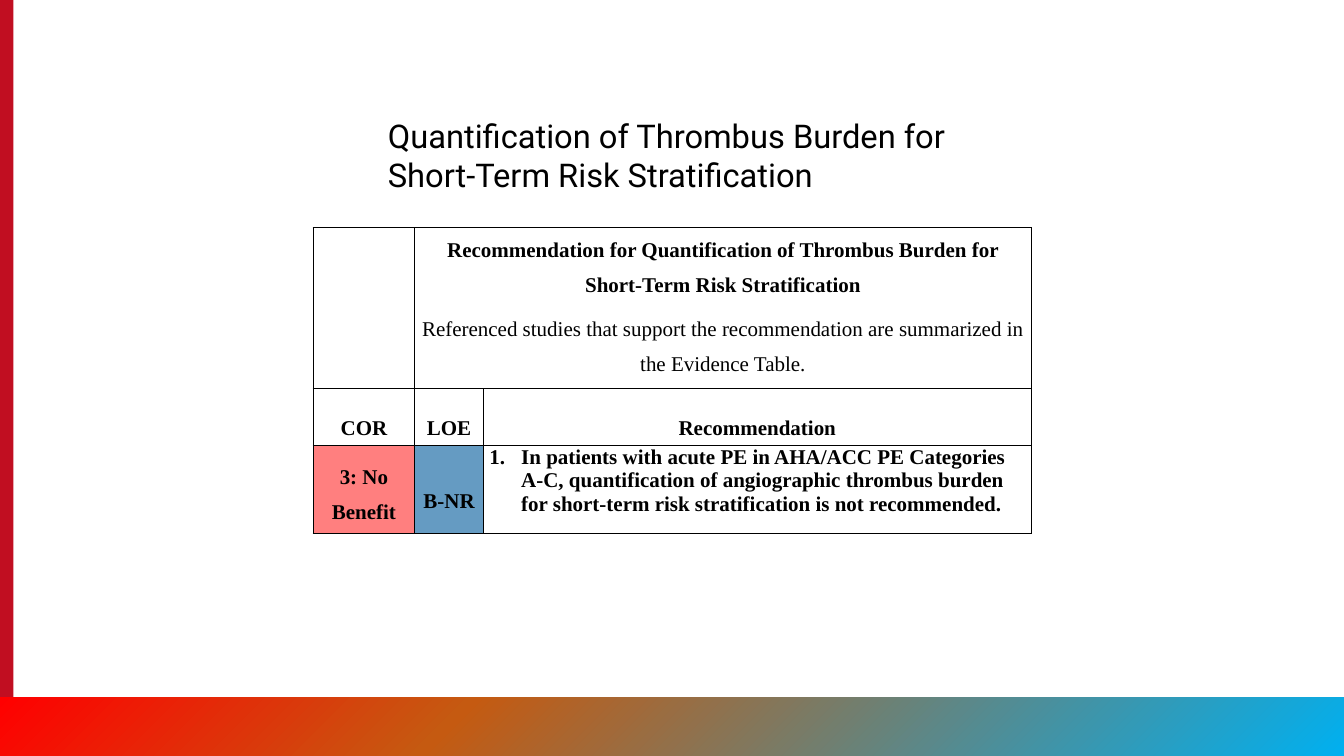
from copy import deepcopy

from lxml.etree import SubElement
from pptx import Presentation
from pptx.dml.color import RGBColor
from pptx.enum.shapes import MSO_SHAPE as Shape
from pptx.enum.text import MSO_ANCHOR as Anchor, PP_ALIGN as Align
from pptx.oxml import parse_xml
from pptx.oxml.ns import nsdecls, qn
from pptx.util import Cm, Pt

BLACK = RGBColor(0x00, 0x00, 0x00)
CRIMSON = RGBColor(0xC1, 0x0E, 0x21)
RED = RGBColor(0xFF, 0x00, 0x00)
ORANGE = RGBColor(0xC5, 0x5A, 0x11)
SKY = RGBColor(0x00, 0xB0, 0xF0)
SALMON = RGBColor(0xFF, 0x7F, 0x7F)
STEEL = RGBColor(0x65, 0x9B, 0xC2)

PAGE_WIDTH, PAGE_HEIGHT = 40.64, 22.86
BAND_HEIGHT = 1.78


def apply(target, formats):
    for name, value in formats.items():
        setattr(target, name, value)


class SlideBuilder:
    title_font = {"name": "Roboto", "size": Pt(28)}
    table_font = {"name": "Times New Roman", "size": Pt(18)}
    cell_format = {"margin_left": Cm(0.18), "margin_right": Cm(0.18),
                   "margin_top": 0, "margin_bottom": 0}

    def __init__(self, page):
        self.page = page

    def add_span(self, para, text, font, bold=False):
        span = para.add_run()
        span.text = text
        apply(span.font, {**font, "bold": bold})
        span.font.color.rgb = BLACK

    def bar(self, left, top, width, height):
        bar = self.page.shapes.add_shape(
            Shape.RECTANGLE, Cm(left), Cm(top), Cm(width), Cm(height))
        bar.shadow.inherit = False
        bar.line.fill.background()
        return bar

    def solid_bar(self, *place, color):
        fill = self.bar(*place).fill
        fill.solid()
        fill.fore_color.rgb = color

    def gradient_bar(self, *place, stops):
        bar = self.bar(*place)
        bar.fill.gradient()
        bar.fill.gradient_angle = 315
        stop_list = next(bar._element.iter(qn("a:gsLst")))
        while len(stop_list) < len(stops):
            stop_list.append(deepcopy(stop_list[-1]))
        for stop, (position, color) in zip(bar.fill.gradient_stops, stops):
            stop.position = position
            stop.color.rgb = color

    def title(self, left, top, width, height, text):
        box = self.page.shapes.add_textbox(Cm(left), Cm(top), Cm(width), Cm(height))
        box.text_frame.word_wrap = True
        self.add_span(box.text_frame.paragraphs[0], text, self.title_font)

    def table(self, left, top, columns, rows):
        table = self.page.shapes.add_table(
            len(rows), len(columns), Cm(left), Cm(top),
            Cm(sum(columns)), Cm(sum(rows))).table
        apply(table, {"first_row": False, "horz_banding": False})
        for column, width in zip(table.columns, columns):
            column.width = Cm(width)
        for row, height in zip(table.rows, rows):
            row.height = Cm(height)
        for cell in table.iter_cells():
            apply(cell, self.cell_format)
            cell.fill.background()
            self.border(cell)
        return table

    def border(self, cell):
        properties = cell._tc.get_or_add_tcPr()
        for index, side in enumerate("LRTB"):
            properties.insert(index, parse_xml(
                f'<a:ln{side} {nsdecls("a")} w="12700"><a:solidFill>'
                f'<a:srgbClr val="{BLACK}"/></a:solidFill></a:ln{side}>'))

    def cell(self, cell, lines, spacing=2.0, color=None, anchor=Anchor.MIDDLE):
        cell.vertical_anchor = anchor
        if color is not None:
            cell.fill.solid()
            cell.fill.fore_color.rgb = color
        for index, (text, bold) in enumerate(lines):
            frame = cell.text_frame
            para = frame.add_paragraph() if index else frame.paragraphs[0]
            apply(para, {"alignment": Align.CENTER, "line_spacing": spacing,
                         "space_after": Pt(8)})
            self.add_span(para, text, self.table_font, bold)

    def numbered_cell(self, cell, text, indent):
        self.cell(cell, [(text, True)], spacing=1.0, anchor=Anchor.TOP)
        para = cell.text_frame.paragraphs[0]
        para.alignment = Align.LEFT
        properties = para._p.get_or_add_pPr()
        properties.set("marL", str(Cm(indent)))
        properties.set("indent", str(-Cm(indent)))
        SubElement(properties, qn("a:buFont"), typeface="+mj-lt")
        SubElement(properties, qn("a:buAutoNum"), type="arabicPeriod")


def main():
    deck = Presentation()
    deck.slide_width, deck.slide_height = Cm(PAGE_WIDTH), Cm(PAGE_HEIGHT)
    builder = SlideBuilder(deck.slides.add_slide(deck.slide_layouts[6]))

    # Side strip and bottom band
    builder.solid_bar(0, 0, 0.41, PAGE_HEIGHT, color=CRIMSON)
    builder.gradient_bar(0, PAGE_HEIGHT - BAND_HEIGHT, PAGE_WIDTH, BAND_HEIGHT,
                         stops=[(0, RED), (0.34, ORANGE), (1, SKY)])

    # Title
    builder.title(11.48, 3.38, 17.68, 2.64,
                  "Quantification of Thrombus Burden for Short-Term Risk Stratification")

    # Recommendation table
    table = builder.table(9.47, 6.88, columns=[3.07, 2.08, 16.56],
                          rows=[4.87, 1.73, 2.64])
    table.cell(0, 1).merge(table.cell(0, 2))
    builder.cell(table.cell(0, 1), [
        ("Recommendation for Quantification of Thrombus Burden for "
         "Short-Term Risk Stratification", True),
        ("Referenced studies that support the recommendation are summarized "
         "in the Evidence Table.", False),
    ], spacing=1.5, anchor=Anchor.TOP)
    for column, heading in enumerate(["COR", "LOE", "Recommendation"]):
        builder.cell(table.cell(1, column), [(heading, True)])
    builder.cell(table.cell(2, 0), [("3: No Benefit", True)], spacing=1.5, color=SALMON)
    builder.cell(table.cell(2, 1), [("B-NR", True)], color=STEEL)
    builder.numbered_cell(
        table.cell(2, 2),
        "In patients with acute PE in AHA/ACC PE Categories A-C, quantification of "
        "angiographic thrombus burden for short-term risk stratification is not "
        "recommended.", indent=0.96)

    deck.save("out.pptx")


if __name__ == "__main__":
    main()
